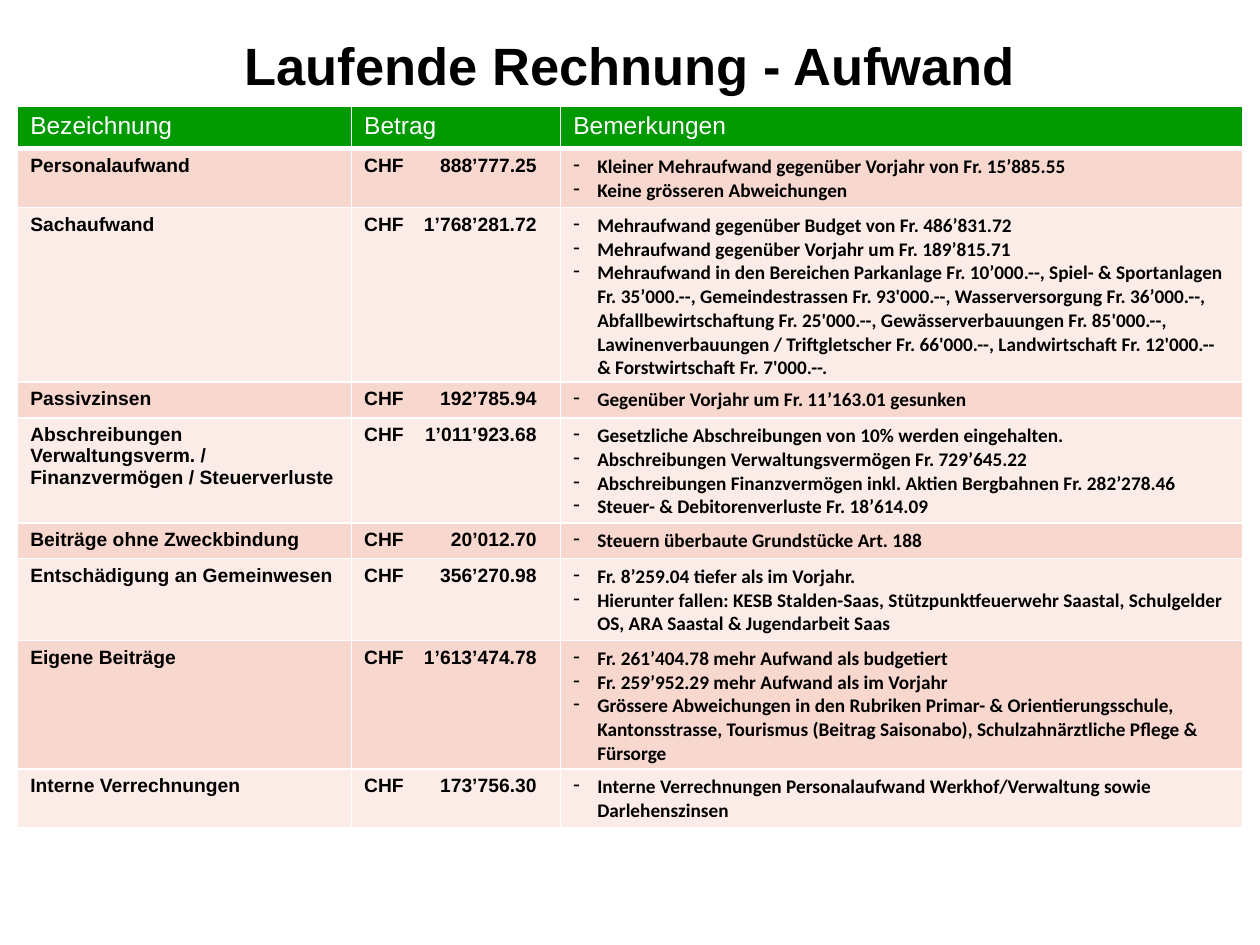
from lxml.etree import SubElement
from pptx import Presentation
from pptx.dml.color import RGBColor
from pptx.enum.text import MSO_ANCHOR, MSO_AUTO_SIZE, PP_ALIGN
from pptx.oxml import parse_xml
from pptx.oxml.ns import nsdecls, qn
from pptx.util import Inches, Pt

BLACK = RGBColor(0x00, 0x00, 0x00)
WHITE = RGBColor(0xFF, 0xFF, 0xFF)
GREEN = RGBColor(0x00, 0x99, 0x00)
BANDS = RGBColor(0xF8, 0xD7, 0xCE), RGBColor(0xFC, 0xEC, 0xE8)

TITLE_BOX = (0, 0.21, 10, 0.61)
TABLE_BOX = (0.14, 0.84, 9.72)
COLUMNS = (2.65, 1.66, 5.41)
HEADER_HEIGHT = 0.34
ROW_PADDING = 0.1
LINE_HEIGHT = 0.18
AMOUNT_TAB = 1.37
INDENT = 0.19

HEADERS = ("Bezeichnung", "Betrag", "Bemerkungen")
EXPENSES = [
    ("Personalaufwand", "888’777.25", 2, [
        "Kleiner Mehraufwand gegenüber Vorjahr von Fr. 15’885.55",
        "Keine grösseren Abweichungen"]),
    ("Sachaufwand", "1’768’281.72", 7, [
        "Mehraufwand gegenüber Budget von Fr. 486’831.72",
        "Mehraufwand gegenüber Vorjahr um Fr. 189’815.71",
        "Mehraufwand in den Bereichen Parkanlage Fr. 10’000.--, Spiel- & Sportanlagen "
        "Fr. 35’000.--, Gemeindestrassen Fr. 93'000.--, Wasserversorgung Fr. 36’000.--, "
        "Abfallbewirtschaftung Fr. 25'000.--, Gewässerverbauungen Fr. 85'000.--, "
        "Lawinenverbauungen / Triftgletscher Fr. 66'000.--, Landwirtschaft Fr. 12'000.-- "
        "& Forstwirtschaft Fr. 7'000.--."]),
    ("Passivzinsen", "192’785.94", 1, [
        "Gegenüber Vorjahr um Fr. 11’163.01 gesunken"]),
    ("Abschreibungen Verwaltungsverm. / Finanzvermögen / Steuerverluste",
     "1’011’923.68", 4, [
        "Gesetzliche Abschreibungen von 10% werden eingehalten.",
        "Abschreibungen Verwaltungsvermögen Fr. 729’645.22",
        "Abschreibungen Finanzvermögen inkl. Aktien Bergbahnen Fr. 282’278.46",
        "Steuer- & Debitorenverluste Fr. 18’614.09"]),
    ("Beiträge ohne Zweckbindung", "20’012.70", 1, [
        "Steuern überbaute Grundstücke Art. 188"]),
    ("Entschädigung an Gemeinwesen", "356’270.98", 3, [
        "Fr. 8’259.04 tiefer als im Vorjahr.",
        "Hierunter fallen: KESB Stalden-Saas, Stützpunktfeuerwehr Saastal, Schulgelder "
        "OS, ARA Saastal & Jugendarbeit Saas"]),
    ("Eigene Beiträge", "1’613’474.78", 5, [
        "Fr. 261’404.78 mehr Aufwand als budgetiert",
        "Fr. 259’952.29 mehr Aufwand als im Vorjahr",
        "Grössere Abweichungen in den Rubriken Primar- & Orientierungsschule, "
        "Kantonsstrasse, Tourismus (Beitrag Saisonabo), Schulzahnärztliche Pflege & "
        "Fürsorge"]),
    ("Interne Verrechnungen", "173’756.30", 2, [
        "Interne Verrechnungen Personalaufwand Werkhof/Verwaltung sowie Darlehenszinsen"]),
]


def format_font(font, name, size, color, bold):
    """Set the typeface, size, colour and weight of a font."""
    font.name, font.size, font.bold = name, Pt(size), bold
    font.color.rgb = color


def add_borders(cell, bottom=1):
    """Draw white lines on the four sides of a cell."""
    widths = {"lnL": 1, "lnR": 1, "lnT": 1, "lnB": bottom}
    for position, (side, width) in enumerate(widths.items()):
        line = parse_xml(
            f'<a:{side} {nsdecls("a")} w="{Pt(width)}"><a:solidFill>'
            f'<a:srgbClr val="{WHITE}"/></a:solidFill></a:{side}>')
        cell._tc.get_or_add_tcPr().insert(position, line)


def fill_cell(cell, lines, fill, font_style, bottom=1):
    """Write the paragraphs of a cell and format its fill, font and borders."""
    cell.fill.solid()
    cell.fill.fore_color.rgb = fill
    add_borders(cell, bottom)
    cell.text_frame.text = "\n".join(lines)
    for para in cell.text_frame.paragraphs:
        for span in para.runs:
            format_font(span.font, *font_style)


def add_amount_tab(para):
    """Give a paragraph a right-aligned tab stop for the amount."""
    tabs = SubElement(para._p.get_or_add_pPr(), qn("a:tabLst"))
    SubElement(tabs, qn("a:tab"), pos=str(Inches(AMOUNT_TAB)), algn="r")


def add_dash(para):
    """Turn a paragraph into a dashed list item."""
    props = para._p.get_or_add_pPr()
    props.set("marL", str(Inches(INDENT)))
    props.set("indent", str(-Inches(INDENT)))
    SubElement(props, qn("a:buFontTx"))
    SubElement(props, qn("a:buChar"), char="-")


def place_title(page, box):
    """Place and format the slide title in the given box."""
    title = page.shapes.title
    title.left, title.top, title.width, title.height = map(Inches, box)
    frame = title.text_frame
    frame.text = "Laufende Rechnung - Aufwand"
    frame.vertical_anchor = MSO_ANCHOR.TOP
    frame.auto_size = MSO_AUTO_SIZE.SHAPE_TO_FIT_TEXT
    para = frame.paragraphs[0]
    para.alignment = PP_ALIGN.CENTER
    format_font(para.runs[0].font, "Arial", 30, BLACK, True)


def place_expenses(page, box):
    """Place the expense table, with row heights set by their line counts."""
    heights = [HEADER_HEIGHT] + [
        ROW_PADDING + LINE_HEIGHT * count for _, _, count, _ in EXPENSES]
    table = page.shapes.add_table(
        len(heights), len(COLUMNS), *map(Inches, box), Inches(sum(heights))).table
    for column, width in zip(table.columns, COLUMNS):
        column.width = Inches(width)
    for row, height in zip(table.rows, heights):
        row.height = Inches(height)
    for cell, header in zip(table.rows[0].cells, HEADERS):
        fill_cell(cell, [header], GREEN, ("Arial", 14, WHITE, False), bottom=3)
    for index, (label, amount, _, remarks) in enumerate(EXPENSES):
        cells = list(table.rows[index + 1].cells)
        contents = [label], [f"CHF\t{amount}"], remarks
        for cell, lines, font in zip(cells, contents, ("Arial", "Arial", "Calibri")):
            fill_cell(cell, lines, BANDS[index % 2], (font, 11, BLACK, True))
        add_amount_tab(cells[1].text_frame.paragraphs[0])
        for para in cells[2].text_frame.paragraphs:
            add_dash(para)


def main():
    """Build the deck and save it."""
    deck = Presentation()
    deck.slide_width, deck.slide_height = Inches(10), Inches(7.5)
    page = deck.slides.add_slide(deck.slide_layouts.get_by_name("Title Only"))
    place_title(page, TITLE_BOX)
    place_expenses(page, TABLE_BOX)
    deck.save("out.pptx")


if __name__ == "__main__":
    main()
